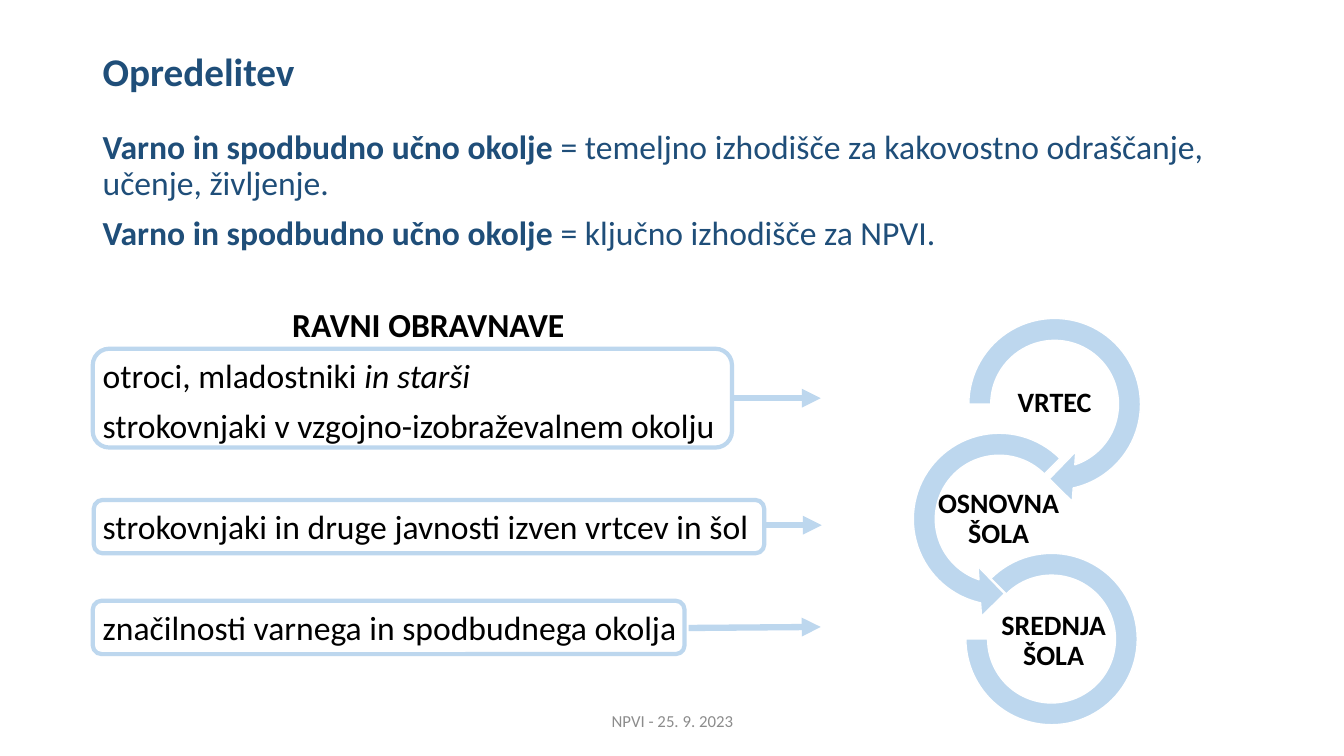
from dataclasses import dataclass

from lxml.etree import SubElement
from pptx import Presentation
from pptx.dml.color import RGBColor
from pptx.enum.shapes import MSO_CONNECTOR as CONNECTOR, MSO_SHAPE as SHAPE
from pptx.enum.text import MSO_ANCHOR as ANCHOR, PP_ALIGN as ALIGN
from pptx.oxml.ns import qn
from pptx.util import Inches, Pt


@dataclass(frozen=True)
class Theme:
    """Colours, font and type sizes of the slide."""
    font: str = "Calibri"
    navy: str = "1F4E79"
    sky: str = "BDD7EE"
    black: str = "000000"
    white: str = "FFFFFF"
    grey: str = "8C8C8C"
    title: int = 28
    body: int = 24
    label: int = 20
    footer: int = 12


def add_run(paragraph, text, *, font, size, color, bold=False, italic=False):
    """Append formatted text to a paragraph."""
    run = paragraph.add_run()
    run.text = text
    run.font.name, run.font.size = font, Pt(size)
    run.font.bold, run.font.italic = bold, italic
    run.font.color.rgb = RGBColor.from_string(color)


class SlideBuilder:
    """Draw styled elements on one slide."""

    def __init__(self, slide, theme):
        """Keep the slide and its theme."""
        self.slide, self.theme = slide, theme

    def text_frame(self, box, anchor=ANCHOR.TOP, inset=None):
        """Add a wrapping text box and return its frame."""
        frame = self.slide.shapes.add_textbox(*map(Inches, box)).text_frame
        frame.word_wrap, frame.vertical_anchor = True, anchor
        if inset is not None:
            frame.margin_left = frame.margin_right = Inches(inset)
            frame.margin_top = frame.margin_bottom = Inches(inset)
        return frame

    def text(self, box, text, size, color, bold=False, align=ALIGN.CENTER, inset=None, spacing=0.9):
        """Add one vertically centred paragraph."""
        paragraph = self.text_frame(box, ANCHOR.MIDDLE, inset).paragraphs[0]
        paragraph.alignment, paragraph.line_spacing = align, spacing
        add_run(paragraph, text, font=self.theme.font, size=size, color=color, bold=bold)

    def body(self, box, paragraphs):
        """Add paragraphs given as space before, left indent and runs."""
        frame = self.text_frame(box)
        for index, (space, indent, runs) in enumerate(paragraphs):
            paragraph = frame.add_paragraph() if index else frame.paragraphs[0]
            paragraph.line_spacing, paragraph.space_before = 0.9, Pt(space)
            paragraph._p.get_or_add_pPr().set("marL", str(Inches(indent)))
            for text, style in runs:
                add_run(paragraph, text, font=self.theme.font, size=self.theme.body, **style)

    def shape(self, kind, box, line, width, fill=None, adjustments=()):
        """Add a preset shape, unfilled unless a fill is given."""
        shape = self.slide.shapes.add_shape(kind, *map(Inches, box))
        shape.shadow.inherit = False
        for index, value in enumerate(adjustments):
            shape.adjustments[index] = value
        if fill:
            shape.fill.solid()
            shape.fill.fore_color.rgb = RGBColor.from_string(fill)
        else:
            shape.fill.background()
        shape.line.color.rgb = RGBColor.from_string(line)
        shape.line.width = Pt(width)

    def arrow(self, start, end):
        """Add a straight arrow between two points."""
        connector = self.slide.shapes.add_connector(CONNECTOR.STRAIGHT, *map(Inches, start + end))
        connector.line.color.rgb = RGBColor.from_string(self.theme.sky)
        connector.line.width = Pt(4.5)
        SubElement(connector.line._get_or_add_ln(), qn("a:tailEnd"), type="triangle")
        SubElement(connector._element.spPr, qn("a:effectLst"))


def main():
    """Build and save the slide."""
    theme = Theme()
    presentation = Presentation()
    presentation.slide_width, presentation.slide_height = Inches(13.33), Inches(7.5)
    builder = SlideBuilder(presentation.slides.add_slide(presentation.slide_layouts[6]), theme)

    term = ("Varno in spodbudno učno okolje ", dict(color=theme.navy, bold=True))
    navy, black = dict(color=theme.navy), dict(color=theme.black)
    builder.text((0.92, 0.4, 11.5, 0.67), "Opredelitev", theme.title, theme.navy,
                 bold=True, align=ALIGN.LEFT)
    builder.body((0.92, 1.24, 11.5, 6.09), [
        (10, 0, [term, ("= temeljno izhodišče za kakovostno odraščanje, učenje, življenje.", navy)]),
        (10, 0, [term, ("= ključno izhodišče za NPVI.", navy)]),
        (40, 1.88, [("RAVNI OBRAVNAVE", dict(black, bold=True))]),
        (10, 0, [("otroci, mladostniki ", black), ("in starši", dict(black, italic=True))]),
        (10, 0, [("strokovnjaki v vzgojno-izobraževalnem okolju", black)]),
        (46.4, 0, [("strokovnjaki in druge javnosti izven vrtcev in šol", black)]),
        (46.4, 0, [("značilnosti varnega in spodbudnega okolja", black)]),
    ])

    levels = [
        ((0.92, 3.46, 6.34, 0.98), (7.25, 3.95), (8.14, 3.95)),
        ((0.93, 4.96, 6.65, 0.53), (7.58, 5.21), (8.15, 5.21)),
        ((0.92, 5.96, 5.87, 0.53), (6.83, 6.23), (8.14, 6.22)),
    ]
    for frame, start, end in levels:
        builder.shape(SHAPE.ROUNDED_RECTANGLE, frame, theme.sky, 3)
        builder.arrow(start, end)

    stages = [
        ("VRTEC", (9.91, 3.73, 1.1, 0.55), SHAPE.CIRCULAR_ARROW,
         (9.47, 3.02, 1.98, 1.98), (0.11, 11.42, 45, 108, 0.125)),
        ("OSNOVNA ŠOLA", (9.23, 4.88, 1.35, 0.55), SHAPE.LEFT_CIRCULAR_ARROW,
         (8.92, 4.16, 1.98, 1.98), (0.11, 11.42, 63, 189, 0.125)),
        ("SREDNJA ŠOLA", (9.9, 6.09, 1.1, 0.55), SHAPE.BLOCK_ARC,
         (9.58, 5.49, 1.7, 1.7), (135, 108, 0.127)),
    ]
    for label, label_box, kind, ring_box, adjustments in stages:
        builder.shape(kind, ring_box, theme.white, 1, theme.sky, adjustments)
        builder.text(label_box, label, theme.label, theme.black, bold=True, inset=0.01)

    builder.text((4.42, 6.95, 4.5, 0.4), "NPVI - 25. 9. 2023", theme.footer, theme.grey, spacing=1)
    presentation.save("out.pptx")


if __name__ == "__main__":
    main()
